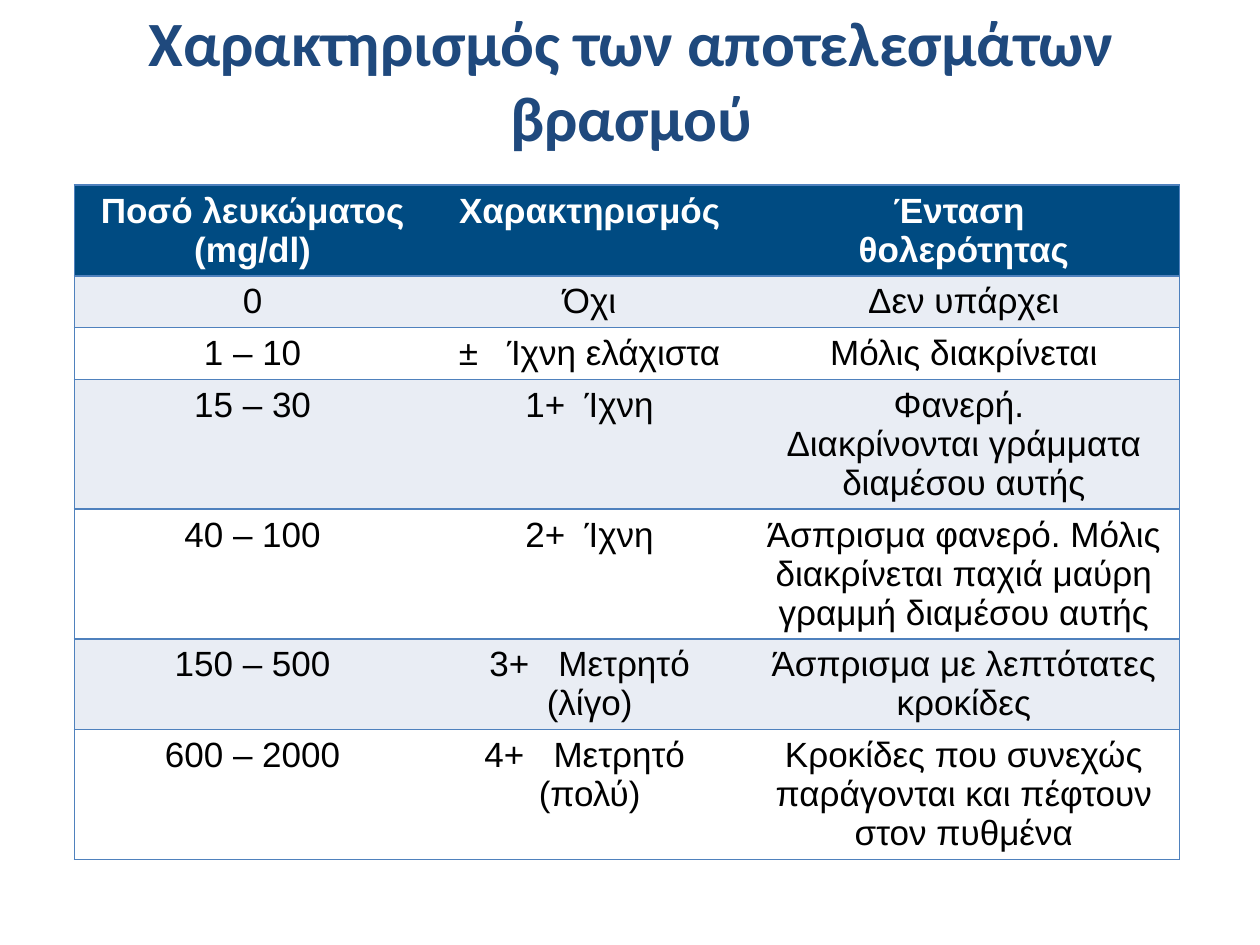
from lxml import etree
from pptx import Presentation
from pptx.dml.color import RGBColor
from pptx.enum.text import MSO_ANCHOR, MSO_AUTO_SIZE, PP_ALIGN
from pptx.oxml.ns import qn
from pptx.util import Inches, Pt

CENTER = PP_ALIGN.CENTER
MIDDLE = MSO_ANCHOR.MIDDLE
NO_AUTOFIT = MSO_AUTO_SIZE.NONE
TITLE_ONLY = 5

COLORS = {
    "title": "1F497D",
    "header": "004B82",
    "header_text": "FFFFFF",
    "text": "000000",
    "band": "E9EDF4",
    "plain": "FFFFFF",
    "border": "4F81BD",
}
TITLE = "Χαρακτηρισμός των αποτελεσμάτων βρασμού"
COLUMN_WIDTHS = [2.83, 2.52, 3.42]
HEADER_HEIGHT, ROW_HEIGHT = 0.71, 0.28
ROWS = [
    ("Ποσό λευκώματος (mg/dl)", "Xαρακτηρισμός", "Ένταση \nθολερότητας"),
    ("0", "Όχι", "Δεν υπάρχει"),
    ("1 – 10", "±   Ίχνη ελάχιστα", "Μόλις διακρίνεται"),
    ("15 – 30", "1+  Ίχνη", "Φανερή. \nΔιακρίνονται γράμματα διαμέσου αυτής"),
    ("40 – 100", "2+  Ίχνη",
     "Άσπρισμα φανερό. Μόλις διακρίνεται παχιά μαύρη γραμμή διαμέσου αυτής"),
    ("150 – 500", "3+   Μετρητό (λίγο)", "Άσπρισμα με λεπτότατες κροκίδες"),
    ("600 – 2000", "4+   Μετρητό  (πολύ)",
     "Κροκίδες που συνεχώς παράγονται και πέφτουν στον πυθμένα"),
]


def rgb(name):
    return RGBColor.from_string(COLORS[name])


def format_text(frame, font_name, size, color, bold):
    for para in frame.paragraphs:
        para.alignment = CENTER
        para.font.name = font_name
        para.font.size = Pt(size)
        para.font.bold = bold
        para.font.color.rgb = rgb(color)


def set_borders(cell, visible_sides):
    properties = cell._tc.get_or_add_tcPr()
    for side in "LRTB":
        line = etree.SubElement(properties, qn(f"a:ln{side}"), w=str(Pt(1)))
        if side in visible_sides:
            fill = etree.SubElement(line, qn("a:solidFill"))
            etree.SubElement(fill, qn("a:srgbClr"), val=COLORS["border"])
        else:
            etree.SubElement(line, qn("a:noFill"))


def place_title(page, left, top, width, height):
    title = page.shapes.title
    title.left, title.top, title.width, title.height = left, top, width, height
    frame = title.text_frame
    frame.text = TITLE
    frame.word_wrap = True
    frame.auto_size = NO_AUTOFIT
    frame.vertical_anchor = MIDDLE
    format_text(frame, "Calibri", 36, "title", True)


def place_results_table(page, left, top, width, height):
    table = page.shapes.add_table(
        len(ROWS), len(COLUMN_WIDTHS), left, top, width, height).table
    for column, column_width in zip(table.columns, COLUMN_WIDTHS):
        column.width = Inches(column_width)
    outer_sides = {0: "L", len(COLUMN_WIDTHS) - 1: "R"}
    for row_index, texts in enumerate(ROWS):
        is_header = row_index == 0
        table.rows[row_index].height = Inches(HEADER_HEIGHT if is_header else ROW_HEIGHT)
        fill_name = "header" if is_header else "band" if row_index % 2 else "plain"
        for column_index, text in enumerate(texts):
            cell = table.cell(row_index, column_index)
            cell.text = text
            set_borders(cell, "TB" + outer_sides.get(column_index, ""))
            cell.fill.solid()
            cell.fill.fore_color.rgb = rgb(fill_name)
            format_text(cell.text_frame, "Arial", 20,
                        "header_text" if is_header else "text", is_header)


def main():
    deck = Presentation()
    deck.slide_width, deck.slide_height = Inches(10), Inches(7.5)
    page = deck.slides.add_slide(deck.slide_layouts[TITLE_ONLY])
    place_title(page, Inches(0.51), Inches(0.13), Inches(9), Inches(0.99))
    table_height = HEADER_HEIGHT + ROW_HEIGHT * (len(ROWS) - 1)
    place_results_table(page, Inches(0.59), Inches(1.47),
                        Inches(sum(COLUMN_WIDTHS)), Inches(table_height))
    deck.save("out.pptx")


if __name__ == "__main__":
    main()
